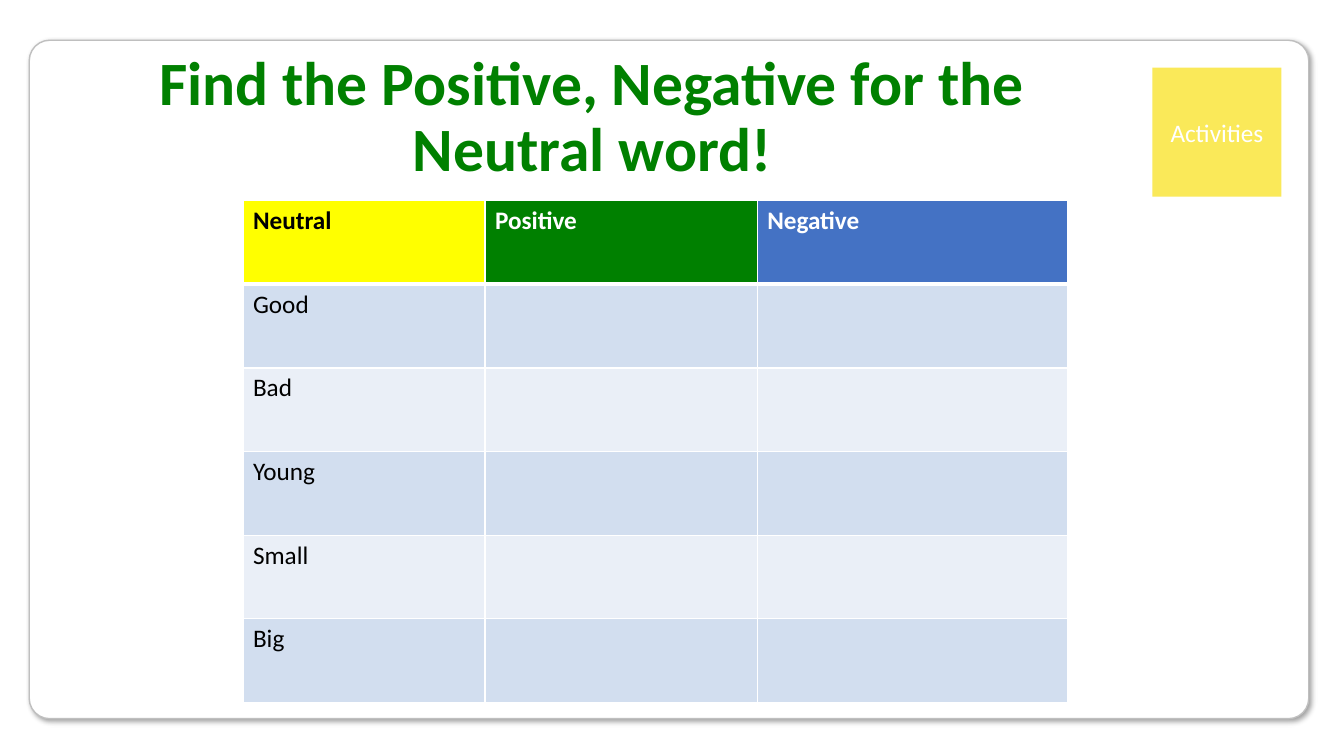
from lxml.etree import SubElement as Sub
from pptx import Presentation
from pptx.dml.color import RGBColor as RGB
from pptx.enum.shapes import MSO_SHAPE as Shape
from pptx.enum.text import MSO_ANCHOR as Anchor, MSO_AUTO_SIZE as Fit, PP_ALIGN as Align
from pptx.oxml.ns import qn
from pptx.util import Inches, Pt

FONT = "Calibri"
WHITE = RGB(0xFF, 0xFF, 0xFF)
BLACK = RGB(0, 0, 0)
GREY = RGB(0xBF, 0xBF, 0xBF)
GREEN = RGB(0, 0x80, 0)
YELLOW = RGB(0xFF, 0xFF, 0)
LEMON = RGB(0xFA, 0xE9, 0x59)
BLUE = RGB(0x44, 0x72, 0xC4)
BANDS = RGB(0xD2, 0xDE, 0xEF), RGB(0xEA, 0xEF, 0xF7)

HEADS = [("Neutral", YELLOW, BLACK), ("Positive", GREEN, WHITE), ("Negative", BLUE, WHITE)]
WORDS = ["Good", "Bad", "Young", "Small", "Big"]
WIDTHS = [2.4, 2.7, 3.08]
ROW = 0.83


def write(frame, text, size=18, color=BLACK, bold=False, align=Align.LEFT, space=None):
    para = frame.paragraphs[0]
    para.alignment = align
    para.line_spacing = space
    run = para.add_run()
    run.text = text
    font = run.font
    font.name, font.size, font.bold = FONT, Pt(size), bold
    font.color.rgb = color


def add_box(slide, kind, left, top, width, height, fill, line=None):
    box = slide.shapes.add_shape(kind, Inches(left), Inches(top), Inches(width), Inches(height))
    box.shadow.inherit = False
    box.fill.solid()
    box.fill.fore_color.rgb = fill
    if line is None:
        box.line.fill.background()
    else:
        box.line.color.rgb = line
        box.line.width = Pt(1)
    return box


def add_shadow(box):
    effects = box.element.spPr.find(qn("a:effectLst"))
    shadow = Sub(effects, qn("a:outerShdw"), blurRad=str(Pt(4)), dist=str(Pt(3)),
                 dir=str(45 * 60000), algn="tl", rotWithShape="0")
    color = Sub(shadow, qn("a:srgbClr"), val=str(BLACK))
    Sub(color, qn("a:alpha"), val="40000")


def set_edges(cell, **widths):
    props = cell.fill and cell._tc.get_or_add_tcPr()
    for spot, side in enumerate("LRTB"):
        edge = props.makeelement(qn(f"a:ln{side}"), w=str(Pt(widths.get(side, 1))))
        Sub(Sub(edge, qn("a:solidFill")), qn("a:srgbClr"), val=str(WHITE))
        props.insert(spot, edge)


def fill_cell(cell, fill, text="", **style):
    cell.fill.solid()
    cell.fill.fore_color.rgb = fill
    if text:
        write(cell.text_frame, text, **style)


def add_grid(slide):
    count = len(WORDS) + 1
    table = slide.shapes.add_table(count, len(WIDTHS), Inches(2.41), Inches(1.99),
                                   Inches(sum(WIDTHS)), Inches(ROW * count)).table
    for col, width in zip(table.columns, WIDTHS):
        col.width = Inches(width)
    for row in table.rows:
        row.height = Inches(ROW)

    # Header row, with a thick rule below
    for col, (head, fill, color) in enumerate(HEADS):
        fill_cell(table.cell(0, col), fill, head, color=color, bold=True)
        set_edges(table.cell(0, col), B=3)

    # Banded word rows
    for row, word in enumerate(WORDS, 1):
        for col in range(len(WIDTHS)):
            cell = table.cell(row, col)
            fill_cell(cell, BANDS[(row - 1) % 2], "" if col else word)
            set_edges(cell, T=3 if row == 1 else 1)


def set_title(slide, text):
    title = slide.shapes.title
    title.left, title.top = Inches(0.46), Inches(0.4)
    title.width, title.height = Inches(10.83), Inches(1.55)
    frame = title.text_frame
    frame.word_wrap, frame.auto_size = True, Fit.NONE
    frame.vertical_anchor = Anchor.MIDDLE
    write(frame, text, size=44, color=GREEN, bold=True, align=Align.CENTER, space=0.9)
    # Bring the title in front of the card
    slide.shapes.element.append(title.element)


def main():
    deck = Presentation()
    deck.slide_width, deck.slide_height = Inches(13.33), Inches(7.5)
    slide = deck.slides.add_slide(deck.slide_layouts[5])

    # Card
    card = add_box(slide, Shape.ROUNDED_RECTANGLE, 0.29, 0.4, 12.69, 6.73, WHITE, GREY)
    card.adjustments[0] = 0.03
    add_shadow(card)

    # Tag
    tag = add_box(slide, Shape.RECTANGLE, 11.43, 0.67, 1.28, 1.28, LEMON)
    tag.text_frame.vertical_anchor = Anchor.MIDDLE
    write(tag.text_frame, "Activities", color=WHITE, align=Align.CENTER)

    # Title and table
    set_title(slide, "Find the Positive, Negative for the Neutral word!")
    add_grid(slide)
    deck.save("out.pptx")


if __name__ == "__main__":
    main()
